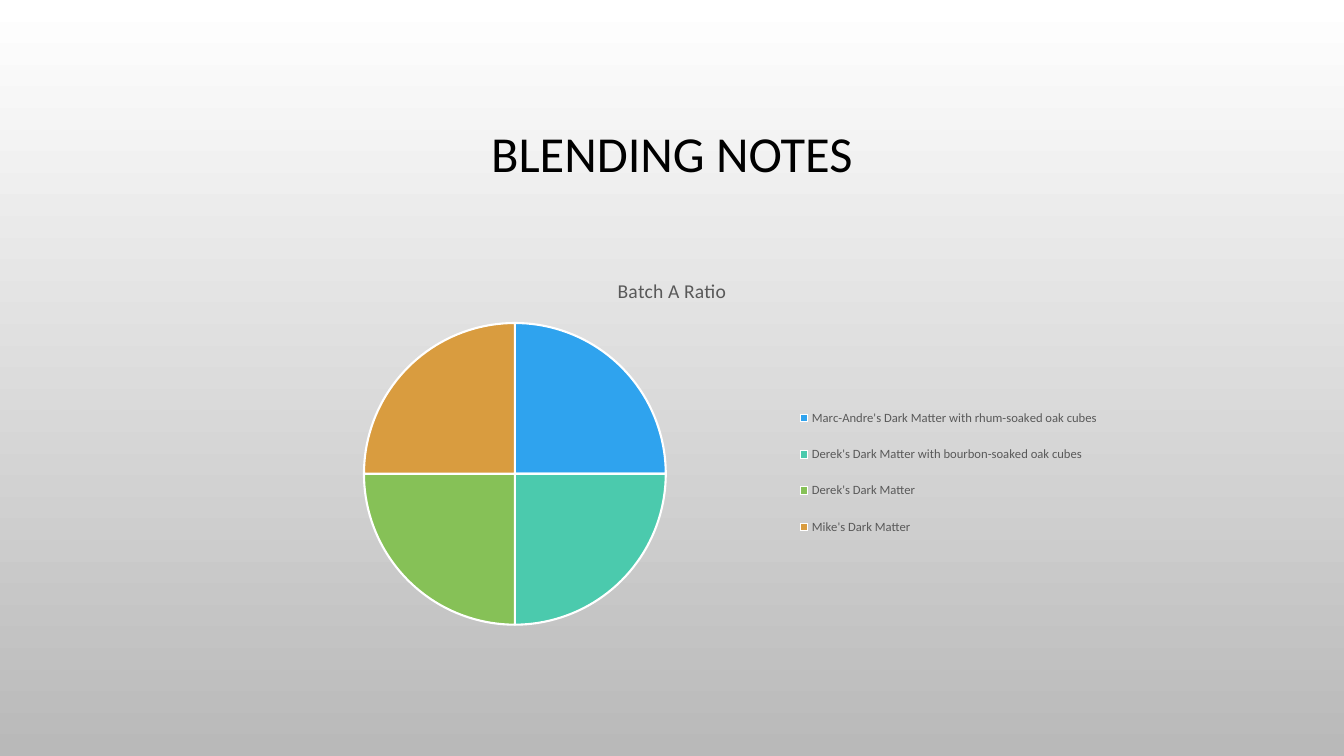
from dataclasses import dataclass

from lxml.etree import SubElement
from pptx import Presentation
from pptx.chart.data import CategoryChartData as ChartData
from pptx.dml.color import RGBColor as RGB
from pptx.enum.chart import XL_CHART_TYPE as ChartType, XL_LEGEND_POSITION as LegendPos
from pptx.enum.text import MSO_ANCHOR as Anchor, PP_ALIGN as Align
from pptx.oxml.ns import qn
from pptx.util import Inches, Pt


@dataclass(frozen=True)
class Theme:
    font: str = "Calibri"
    ink: str = "000000"
    muted: str = "595959"
    edge: str = "FFFFFF"
    backdrop: tuple = ("FFFFFF", "B9B9B9")
    slices: tuple = ("2FA3EE", "4BCAAD", "86C157", "D99C3F")
    title_size: int = 36
    chart_title_size: int = 14
    chart_size: int = 10
    legend_size: int = 9


THEME = Theme()
WIDTH, HEIGHT = Inches(13.33), Inches(7.5)
TITLE_BOX = (0.075, 0.09, 0.85, 0.233)
CHART_BOX = (0.075, 0.345, 0.85, 0.499)
PIE_AREA = (0.23, 0.165, 0.265, 0.8)
LEGEND_AREA = (0.607, 0.34, 0.27, 0.443)
BATCH = {
    "Marc-Andre's Dark Matter with rhum-soaked oak cubes": 25,
    "Derek's Dark Matter with bourbon-soaked oak cubes": 25,
    "Derek's Dark Matter": 25,
    "Mike's Dark Matter": 25,
}


def place(box):
    return [int(share * side) for share, side in zip(box, (WIDTH, HEIGHT) * 2)]


def style_font(font, size, color):
    formats = {"name": THEME.font, "size": Pt(size), "bold": False}
    for name, value in formats.items():
        setattr(font, name, value)
    font.color.rgb = RGB.from_string(color)


def add_backdrop(s):
    fill = s.background.fill
    fill.gradient()
    fill.gradient_angle = 270
    for stop, color, position in zip(fill.gradient_stops, THEME.backdrop, (0, 1)):
        stop.color.rgb = RGB.from_string(color)
        stop.position = position


def add_title(s, text):
    tf = s.shapes.add_textbox(*place(TITLE_BOX)).text_frame
    for name, value in {"word_wrap": True, "vertical_anchor": Anchor.MIDDLE}.items():
        setattr(tf, name, value)
    p = tf.paragraphs[0]
    for name, value in {"alignment": Align.CENTER, "line_spacing": 0.9}.items():
        setattr(p, name, value)
    r = p.add_run()
    r.text = text
    style_font(r.font, THEME.title_size, THEME.ink)


def set_layout(parent, area, before, inner=False):
    for old in parent.findall(qn("c:layout")):
        parent.remove(old)
    layout = SubElement(parent, qn("c:layout"))
    parent.find(qn(before)).addprevious(layout)
    manual = SubElement(layout, qn("c:manualLayout"))
    values = {"layoutTarget": "inner"} if inner else {}
    values.update(xMode="edge", yMode="edge")
    values.update(zip("xywh", area))
    for tag, value in values.items():
        SubElement(manual, qn(f"c:{tag}")).set("val", str(value))


def add_pie(s, title, parts):
    data = ChartData()
    data.categories = list(parts)
    data.add_series("Series 1", list(parts.values()))
    chart = s.shapes.add_chart(ChartType.PIE, *place(CHART_BOX), data).chart
    style_font(chart.font, THEME.chart_size, THEME.ink)

    chart.has_title = True
    r = chart.chart_title.text_frame.paragraphs[0].add_run()
    r.text = title
    style_font(r.font, THEME.chart_title_size, THEME.muted)
    chart.chart_title.include_in_layout = False

    chart.has_legend = True
    legend = chart.legend
    for name, value in {"position": LegendPos.RIGHT, "include_in_layout": False}.items():
        setattr(legend, name, value)
    style_font(legend.font, THEME.legend_size, THEME.muted)

    plot = chart.plots[0]
    plot.vary_by_categories = True
    for index, color in enumerate(THEME.slices):
        look = plot.series[0].points[index].format
        look.fill.solid()
        look.fill.fore_color.rgb = RGB.from_string(color)
        look.line.color.rgb = RGB.from_string(THEME.edge)
        look.line.width = Pt(1.5)

    plot_area = chart.element.find(".//" + qn("c:plotArea"))
    set_layout(plot_area, PIE_AREA, "c:pieChart", inner=True)
    set_layout(chart.element.find(".//" + qn("c:legend")), LEGEND_AREA, "c:overlay")


def main():
    prs = Presentation()
    prs.slide_width, prs.slide_height = WIDTH, HEIGHT
    s = prs.slides.add_slide(prs.slide_layouts[6])
    add_backdrop(s)
    add_title(s, "BLENDING NOTES")
    add_pie(s, "Batch A Ratio", BATCH)
    prs.save("out.pptx")


if __name__ == "__main__":
    main()
